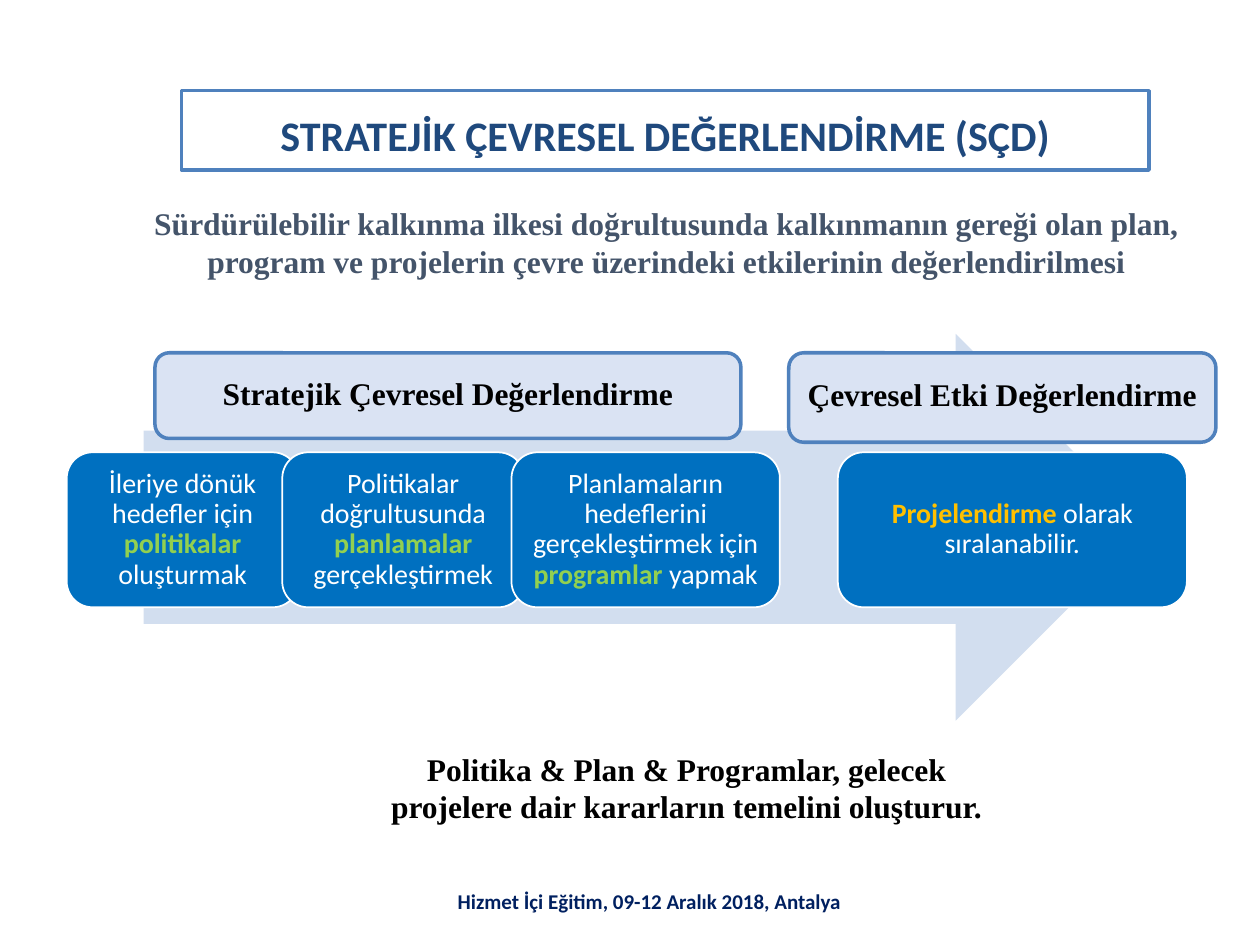
from lxml import etree
from pptx import Presentation
from pptx import util as u
from pptx.dml.color import RGBColor
from pptx.enum import shapes, text
from pptx.oxml.ns import qn

COLORS = {
    "white": "FFFFFF", "black": "000000", "arrow": "D2DEEF", "step": "0070C0",
    "label": "DAE3F3", "border": "4F81BD", "title": "1F497D", "lead": "44546A",
    "footer": "002060", "green": "92D050", "gold": "FFC000",
}
COLUMNS, ROWS = 100, 75
SERIF = {"name": "Times New Roman", "size": u.Pt(18), "bold": True}
STEP = {"name": "Calibri", "size": u.Pt(16), "bold": False}
TITLE = {"name": "Calibri", "size": u.Pt(24), "bold": True}
FOOTER = {"name": "Calibri", "size": u.Pt(12), "bold": True}


def color(name):
    return RGBColor.from_string(COLORS[name])


class SlideBuilder:
    """Holds the deck, its current page and the shared style."""

    def __init__(self):
        self.deck = Presentation()
        self.deck.slide_width, self.deck.slide_height = u.Inches(10), u.Inches(7.5)
        self.page = self.deck.slides.add_slide(self.deck.slide_layouts[5])

    def area(self, left, top, width, height):
        """Turn grid columns and rows into slide lengths."""
        column = self.deck.slide_width / COLUMNS
        row = self.deck.slide_height / ROWS
        return [u.Emu(round(n)) for n in
                (left * column, top * row, width * column, height * row)]

    def paint(self, box, fill, line=None, weight=1):
        box.fill.solid()
        box.fill.fore_color.rgb = color(fill)
        if line:
            box.line.color.rgb = color(line)
            box.line.width = u.Pt(weight)
        else:
            box.line.fill.background()

    def set_text(self, box, spans, font, spacing=1.0, **frame_format):
        """Fill a box with one centred paragraph of (text, colour, extra format) spans."""
        frame = box.text_frame
        settings = {"word_wrap": True, "auto_size": text.MSO_AUTO_SIZE.NONE,
                    "vertical_anchor": text.MSO_ANCHOR.MIDDLE, **frame_format}
        for key, value in settings.items():
            setattr(frame, key, value)
        para = frame.paragraphs[0]
        para.alignment = text.PP_ALIGN.CENTER
        para.line_spacing = spacing
        for words, ink, extra in spans:
            span = para.add_run()
            span.text = words
            for key, value in {**font, **extra}.items():
                setattr(span.font, key, value)
            span.font.color.rgb = color(ink)

    def title(self, words, *cells):
        box = self.page.shapes.title
        box.left, box.top, box.width, box.height = self.area(*cells)
        outline = etree.SubElement(box.element.spPr, qn("a:prstGeom"), prst="roundRect")
        etree.SubElement(outline, qn("a:avLst"))
        self.paint(box, "white", "border", 2)
        self.set_text(box, [(words, "title", {})], TITLE, 1.15)

    def shape(self, kind, cells, *style):
        box = self.page.shapes.add_shape(kind, *self.area(*cells))
        box.shadow.inherit = False
        self.paint(box, *style)
        return box

    def arrow(self, *cells):
        self.shape(shapes.MSO_SHAPE.RIGHT_ARROW, cells, "arrow")

    def step(self, spans, *cells):
        box = self.shape(shapes.MSO_SHAPE.ROUNDED_RECTANGLE, cells, "step", "white", 1)
        margins = {f"margin_{side}": u.Inches(0.07)
                   for side in ("left", "top", "right", "bottom")}
        self.set_text(box, spans, STEP, 0.9, **margins)

    def label(self, words, *cells):
        box = self.shape(shapes.MSO_SHAPE.ROUNDED_RECTANGLE, cells, "label", "border", 2)
        self.set_text(box, [(words, "black", {})], SERIF, margin_bottom=u.Inches(0.1))

    def caption(self, words, ink, font, *cells, anchor=text.MSO_ANCHOR.TOP):
        box = self.page.shapes.add_textbox(*self.area(*cells))
        self.set_text(box, [(words, ink, {})], font, vertical_anchor=anchor)


def main():
    slide = SlideBuilder()
    slide.title("STRATEJİK ÇEVRESEL DEĞERLENDİRME (SÇD)", 14.4, 7.2, 76.8, 6.3)
    slide.arrow(11.4, 26.5, 79.8, 30.7)

    strong = {"bold": True}
    steps = [
        (5.3, 18.4, [("İleriye dönük hedefler için ", "white", {}),
                     ("politikalar ", "green", strong),
                     ("oluşturmak", "white", {})]),
        (22.4, 19.2, [("Politikalar doğrultusunda ", "white", {}),
                      ("planlamalar ", "green", strong),
                      ("gerçekleştirmek", "white", {})]),
        (40.6, 21.3, [("Planlamaların hedeflerini gerçekleştirmek için ", "white", {}),
                      ("programlar", "green", strong),
                      (" yapmak", "white", {})]),
        (66.5, 27.7, [("Projelendirme ", "gold", strong),
                      ("olarak sıralanabilir.", "white", {})]),
    ]
    for left, width, spans in steps:
        slide.step(spans, left, 35.9, width, 12.3)

    slide.label("Çevresel Etki Değerlendirme", 62.6, 28, 33.9, 7.1)
    slide.label("Stratejik Çevresel Değerlendirme", 12.3, 28, 46.5, 6.8)

    slide.caption("Hizmet İçi Eğitim, 09-12 Aralık 2018, Antalya", "footer", FOOTER,
                  34.2, 69.5, 34.7, 4, anchor=text.MSO_ANCHOR.MIDDLE)
    slide.caption("Politika & Plan & Programlar, gelecek projelere dair kararların "
                  "temelini oluşturur.", "black", SERIF, 29.5, 59, 50, 7.1)
    slide.caption("Sürdürülebilir kalkınma ilkesi doğrultusunda kalkınmanın gereği olan "
                  "plan, program ve projelerin çevre üzerindeki etkilerinin "
                  "değerlendirilmesi", "lead", SERIF, 10.8, 15.7, 84.2, 7.1)
    slide.deck.save("out.pptx")


if __name__ == "__main__":
    main()
